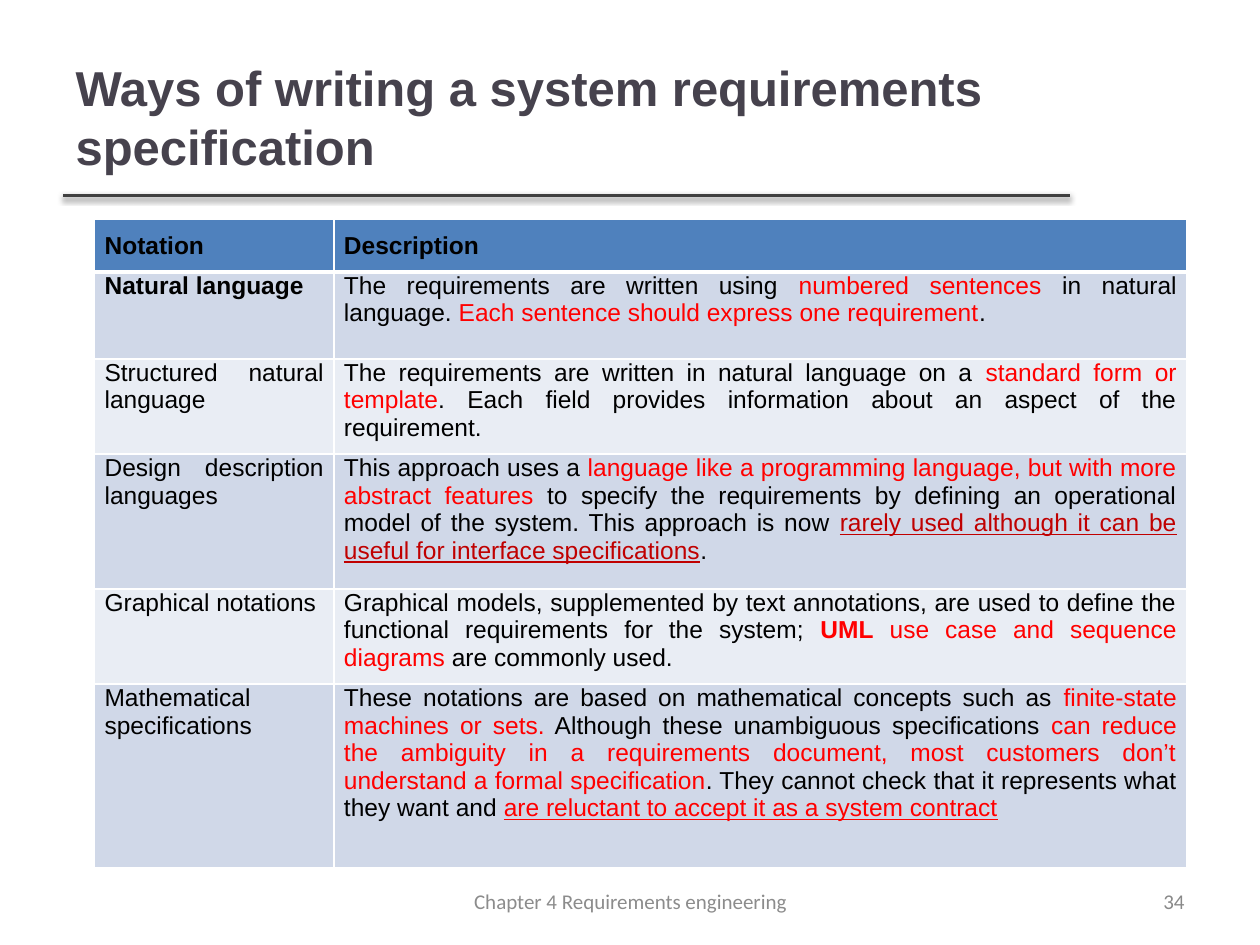
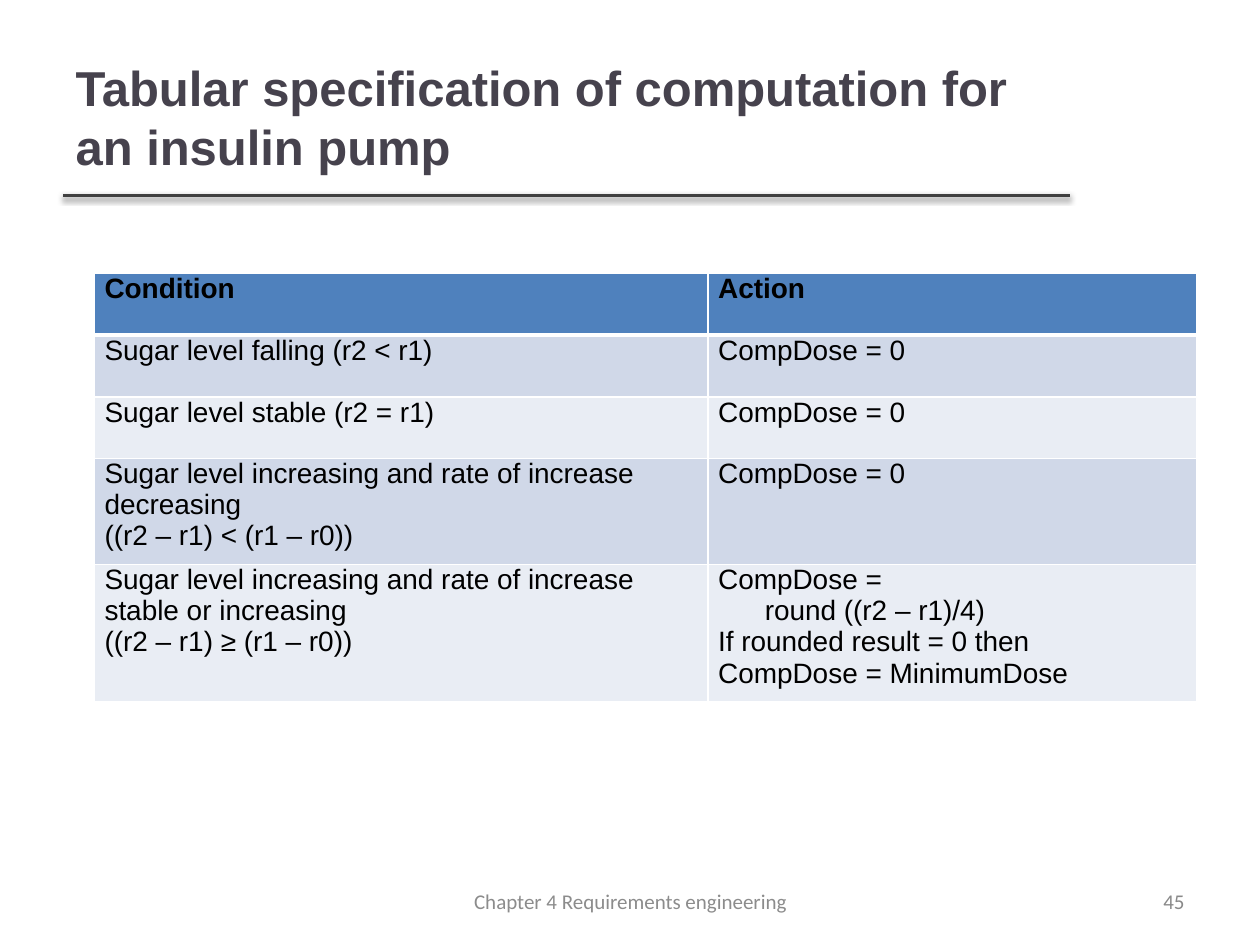
from lxml import etree
from pptx import Presentation
from pptx.dml.color import RGBColor
from pptx.enum import shapes, text
from pptx.oxml import ns
from pptx.util import Inches, Pt

COLORS = {
    "title": "46424D", "rule": "404040", "footer": "8C8C8C", "number": "898989",
    "text": "000000", "border": "FFFFFF", "header": "4F81BD",
    "bands": ("D0D8E8", "E9EDF4"),
}
STYLES = {
    "plain": {},
    "bold": {"bold": True},
    "red": {"color": "FF0000"},
    "red bold": {"color": "FF0000", "bold": True},
    "red underlined": {"color": "FF0000", "underline": True},
    "dark red underlined": {"color": "C00000", "underline": True},
}
FOOTER = "Chapter 4 Requirements engineering"
INDENT = "\t"

NOTATIONS = [
    ("Notation", "Description"),
    ([[("Natural language", "bold")]],
     [[("The requirements are written using ", "plain"),
       ("numbered sentences ", "red"),
       ("in natural language. ", "plain"),
       ("Each sentence should express one requirement", "red"),
       (".", "plain")]]),
    ("Structured natural language",
     [[("The requirements are written in natural language on a ", "plain"),
       ("standard form or template", "red"),
       (". Each field provides information about an aspect of the requirement.", "plain")]]),
    ("Design description languages",
     [[("This approach uses a ", "plain"),
       ("language like a programming language, but with more abstract features", "red"),
       (" to specify the requirements by defining an operational model of the system. "
        "This approach is now ", "plain"),
       ("rarely used although it can be useful for interface specifications",
        "dark red underlined"),
       (".", "plain")]]),
    ("Graphical notations",
     [[("Graphical models, supplemented by text annotations, are used to define the "
        "functional requirements for the system; ", "plain"),
       ("UML", "red bold"),
       (" use case and sequence diagrams", "red"),
       (" are commonly used.", "plain")]]),
    ("Mathematical specifications",
     [[("These notations are based on mathematical concepts such as ", "plain"),
       ("finite-state machines or sets.", "red"),
       (" Although these unambiguous specifications ", "plain"),
       ("can reduce the ambiguity in a requirements document, most customers don’t "
        "understand a formal specification", "red"),
       (". They cannot check that it represents what they want and ", "plain"),
       ("are reluctant to accept it as a system contract", "red underlined")]]),
]
COMPUTATION = [
    ("Condition", "Action"),
    ("Sugar level falling (r2 < r1)", "CompDose = 0"),
    ("Sugar level stable (r2 = r1)", "CompDose = 0"),
    ("Sugar level increasing and rate of increase decreasing\n((r2 – r1) < (r1 – r0))",
     "CompDose = 0"),
    ("Sugar level increasing and rate of increase stable or increasing\n"
     "((r2 – r1) ≥ (r1 – r0))",
     "CompDose =\n" + INDENT + "round ((r2 – r1)/4)\n"
     "If rounded result = 0 then\nCompDose = MinimumDose"),
]
SLIDES = [
    {"title": "Ways of writing a system requirements specification", "number": "34",
     "cells": NOTATIONS, "top": 1.74, "columns": (1.9, 6.77),
     "rows": (0.4, 0.69, 0.69, 1.07, 0.69, 1.46), "size": 14,
     "align": text.PP_ALIGN.JUSTIFY, "header_margin": 0.1},
    {"title": "Tabular specification of computation for an insulin pump", "number": "45",
     "cells": COMPUTATION, "top": 2.17, "columns": (4.87, 3.88),
     "rows": (0.49, 0.49, 0.49, 0.49, 0.67), "size": 16,
     "align": text.PP_ALIGN.LEFT, "header_margin": 0},
]


def rgb(color):
    return RGBColor.from_string(color)


def add_element(parent, tag, **attributes):
    values = {key: str(value) for key, value in attributes.items()}
    return etree.SubElement(parent, ns.qn(tag), values)


def add_run(paragraph, words, size, color, name="Arial", bold=False, underline=False):
    run = paragraph.add_run()
    run.text = words
    font = run.font
    font.name, font.size, font.bold = name, Pt(size), bold
    font.color.rgb = rgb(color)
    if underline:
        font.underline = True


def add_title(slide, words):
    title = slide.shapes.title
    title.left, title.top = Inches(0.5), Inches(0.3)
    title.width, title.height = Inches(7.98), Inches(1.25)
    frame = title.text_frame
    frame.auto_size = text.MSO_AUTO_SIZE.NONE
    frame.vertical_anchor = text.MSO_ANCHOR.MIDDLE
    frame.paragraphs[0].alignment = text.PP_ALIGN.LEFT
    add_run(frame.paragraphs[0], words, 28, COLORS["title"], bold=True)


def add_title_rule(slide):
    rule = slide.shapes.add_connector(
        shapes.MSO_CONNECTOR.STRAIGHT, Inches(0.5), Inches(1.55), Inches(8.49), Inches(1.55))
    rule.line.color.rgb = rgb(COLORS["rule"])
    rule.line.width = Pt(2)
    effects = add_element(rule._element.spPr, "a:effectLst")
    shadow = add_element(effects, "a:outerShdw", blurRad=Pt(3.1), dist=Pt(1.6),
                         dir=90 * 60000, rotWithShape=0)
    shade = add_element(shadow, "a:srgbClr", val="000000")
    add_element(shade, "a:alpha", val=38000)


def add_footer(slide, words, left, width, align, color):
    box = slide.shapes.add_textbox(Inches(left), Inches(6.95), Inches(width), Inches(0.4))
    frame = box.text_frame
    frame.word_wrap = True
    frame.vertical_anchor = text.MSO_ANCHOR.MIDDLE
    frame.paragraphs[0].alignment = align
    add_run(frame.paragraphs[0], words, 12, color, "Calibri")


def set_borders(cell, top, bottom):
    properties = cell._tc.get_or_add_tcPr()
    for side, width in (("L", 1), ("R", 1), ("T", top), ("B", bottom)):
        line = add_element(properties, "a:ln" + side, w=Pt(width))
        fill = add_element(line, "a:solidFill")
        add_element(fill, "a:srgbClr", val=COLORS["border"])


def fill_cell(cell, content, size, align, is_header):
    if isinstance(content, str):
        style = "bold" if is_header else "plain"
        content = [[(line, style)] for line in content.split("\n")]
    frame = cell.text_frame
    for index, runs in enumerate(content):
        paragraph = frame.add_paragraph() if index else frame.paragraphs[0]
        paragraph.alignment = align
        if runs[0][0].startswith(INDENT):
            paragraph._p.get_or_add_pPr().set("marL", str(Inches(0.37)))
        for words, style in runs:
            options = {"color": COLORS["text"], **STYLES[style]}
            add_run(paragraph, words.lstrip(INDENT), size, **options)


def add_grid(slide, page):
    cells, widths, heights = page["cells"], page["columns"], page["rows"]
    table = slide.shapes.add_table(
        len(heights), len(widths), Inches(0.75), Inches(page["top"]),
        Inches(sum(widths)), Inches(sum(heights))).table
    table.first_row = table.horz_banding = False
    for column, width in zip(table.columns, widths):
        column.width = Inches(width)
    for row_index, (row, height) in enumerate(zip(table.rows, heights)):
        row.height = Inches(height)
        is_header = row_index == 0
        color = COLORS["header"] if is_header else COLORS["bands"][(row_index - 1) % 2]
        for cell, content in zip(row.cells, cells[row_index]):
            cell.margin_left = cell.margin_right = Inches(0.08)
            cell.margin_top = Inches(page["header_margin"] if is_header else 0)
            cell.margin_bottom = Inches(0.1)
            set_borders(cell, 3 if row_index == 1 else 1, 3 if is_header else 1)
            cell.fill.solid()
            cell.fill.fore_color.rgb = rgb(color)
            fill_cell(cell, content, page["size"], page["align"], is_header)


def main():
    presentation = Presentation()
    presentation.slide_width, presentation.slide_height = Inches(10), Inches(7.5)
    for page in SLIDES:
        slide = presentation.slides.add_slide(presentation.slide_layouts[5])
        add_title_rule(slide)
        add_title(slide, page["title"])
        add_grid(slide, page)
        add_footer(slide, page["number"], 7.17, 2.33, text.PP_ALIGN.RIGHT, COLORS["number"])
        add_footer(slide, FOOTER, 3.42, 3.17, text.PP_ALIGN.CENTER, COLORS["footer"])
    presentation.save("out.pptx")


if __name__ == "__main__":
    main()
